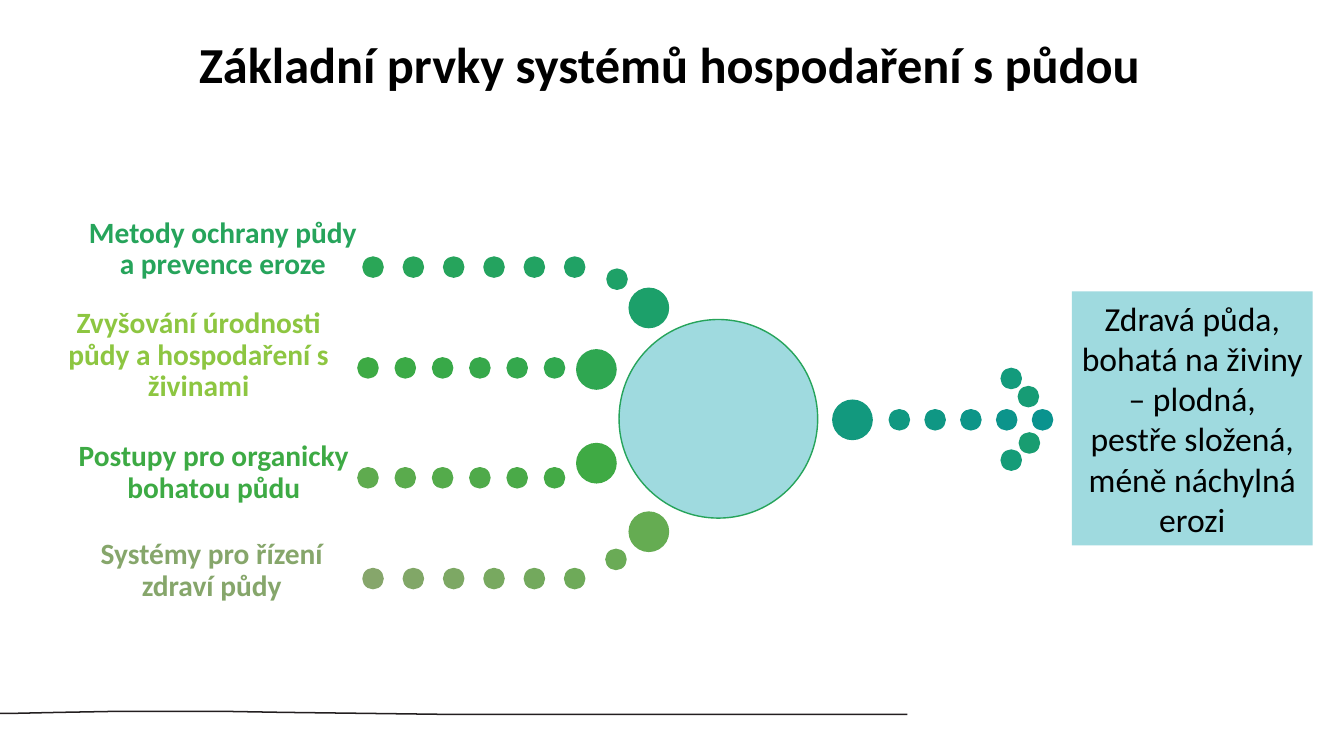
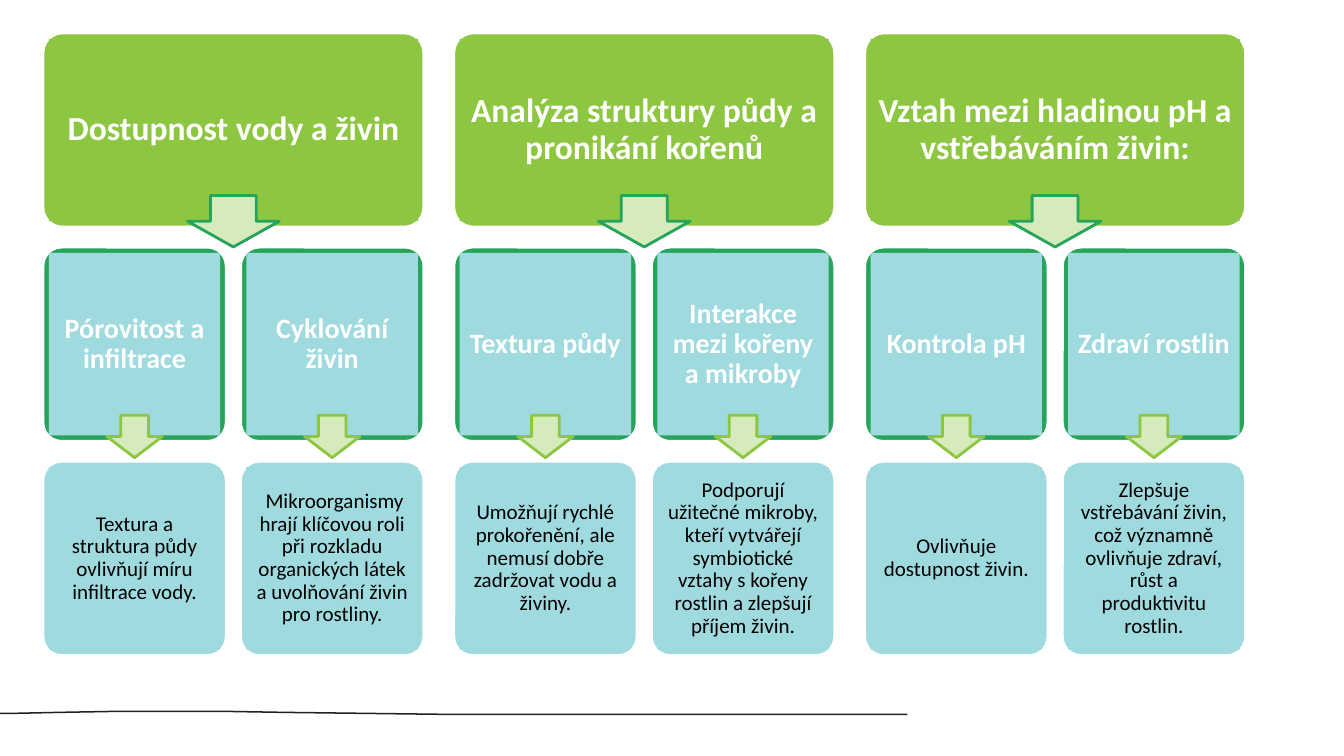
from dataclasses import dataclass

from pptx import Presentation
from pptx.dml.color import RGBColor
from pptx.enum.shapes import MSO_SHAPE
from pptx.enum.text import MSO_ANCHOR, MSO_AUTO_SIZE, PP_ALIGN
from pptx.util import Inches, Pt

FONT = "Calibri"
BLACK = RGBColor(0x00, 0x00, 0x00)
WHITE = RGBColor(0xFF, 0xFF, 0xFF)
INK = RGBColor(0x23, 0x1F, 0x20)
LIME = RGBColor(0x8D, 0xC6, 0x41)
PALE_LIME = RGBColor(0xD6, 0xEB, 0xBB)
GREEN = RGBColor(0x26, 0xA4, 0x5B)
AQUA = RGBColor(0x9F, 0xDA, 0xDF)
TEAL = RGBColor(0x0A, 0x93, 0x8E)
TEAL_GREEN = RGBColor(0x12, 0x99, 0x7E)
HEAD_START = RGBColor(0x13, 0x9B, 0x7C)
HEAD_END = RGBColor(0x19, 0x9D, 0x71)
EMERALD = RGBColor(0x2A, 0xA6, 0x57)
SEA_GREEN = RGBColor(0x1C, 0xA0, 0x6A)
LEAF = RGBColor(0x3D, 0xAA, 0x44)
DEEP_LEAF = RGBColor(0x2F, 0xA7, 0x51)
MOSS = RGBColor(0x5F, 0xAB, 0x4F)
GRASS = RGBColor(0x3F, 0xAA, 0x44)
SAGE = RGBColor(0x86, 0xA6, 0x6B)
FERN = RGBColor(0x65, 0xAC, 0x52)

DOT, HUB = 0.2, 0.39

WAVE_TOP = [(0, 7.07), (0.14, 7.07), (0.6, 7.06), (1.15, 7.05), (1.65, 7.05),
            (2.23, 7.05), (2.8, 7.06), (3.6, 7.07), (4.43, 7.08), (9, 7.08)]
WAVE_THICKNESS = 0.015


@dataclass
class Strand:
    """A label and the trail of dots leading from it to the central circle."""
    label: str
    label_box: tuple
    label_color: RGBColor
    start: tuple
    pitch: float
    bends: list
    hub: tuple
    colors: tuple


STRANDS = [
    Strand("Metody ochrany půdy a prevence eroze", (0.84, 2.3, 2.74, 0.49),
           GREEN, (3.6, 2.55), 0.4, [(6.02, 2.67)], (6.24, 2.86),
           (EMERALD, SEA_GREEN)),
    Strand("Zvyšování úrodnosti půdy a hospodaření s živinami",
           (0.6, 3.51, 2.74, 0.49), LIME, (3.55, 3.55), 0.37, [],
           (5.72, 3.47), (LEAF, DEEP_LEAF)),
    Strand("Postupy pro organicky bohatou půdu", (0.6, 4.52, 3.04, 0.49),
           LEAF, (3.55, 4.64), 0.37, [], (5.72, 4.4), (MOSS, GRASS)),
    Strand("Systémy pro řízení zdraví půdy", (0.73, 5.49, 2.74, 0.49),
           SAGE, (3.6, 5.64), 0.4, [(6.01, 5.45)], (6.24, 5.08),
           (SAGE, FERN)),
]

TOPICS = [
    ("Dostupnost vody a živin", [
        ("Pórovitost a infiltrace",
         "Textura a struktura půdy ovlivňují míru infiltrace vody."),
        ("Cyklování živin",
         " Mikroorganismy hrají klíčovou roli při rozkladu organických látek "
         "a uvolňování živin pro rostliny."),
    ]),
    ("Analýza struktury půdy a pronikání kořenů", [
        ("Textura půdy",
         "Umožňují rychlé prokořenění, ale nemusí dobře zadržovat vodu "
         "a živiny."),
        ("Interakce mezi kořeny a mikroby",
         "Podporují užitečné mikroby, kteří vytvářejí symbiotické vztahy "
         "s kořeny rostlin a zlepšují příjem živin."),
    ]),
    ("Vztah mezi hladinou pH a vstřebáváním živin:", [
        ("Kontrola pH", "Ovlivňuje dostupnost živin."),
        ("Zdraví rostlin",
         "Zlepšuje vstřebávání živin, což významně ovlivňuje zdraví, růst "
         "a produktivitu rostlin."),
    ]),
]


def add_box(slide, kind, box, fill, line=None, line_width=1):
    shape = slide.shapes.add_shape(kind, *map(Inches, box))
    shape.shadow.inherit = False
    shape.fill.solid()
    shape.fill.fore_color.rgb = fill
    if line is None:
        shape.line.fill.background()
    else:
        shape.line.color.rgb = line
        shape.line.width = Pt(line_width)
    return shape


def write(shape, text, size, color, bold=False, anchor=MSO_ANCHOR.MIDDLE,
          insets=(0.1, 0.05), spacing=None):
    frame = shape.text_frame
    frame.word_wrap = True
    frame.auto_size = MSO_AUTO_SIZE.NONE
    frame.vertical_anchor = anchor
    frame.margin_left = frame.margin_right = Inches(insets[0])
    frame.margin_top = frame.margin_bottom = Inches(insets[1])
    paragraph = frame.paragraphs[0]
    paragraph.alignment = PP_ALIGN.CENTER
    if spacing:
        paragraph.line_spacing = spacing
    run = paragraph.add_run()
    run.text = text
    run.font.name = FONT
    run.font.size = Pt(size)
    run.font.bold = bold
    run.font.color.rgb = color


def add_footer_wave(slide):
    bottom = [(x, y + WAVE_THICKNESS) for x, y in reversed(WAVE_TOP)]
    points = [(Inches(x), Inches(y)) for x, y in WAVE_TOP + bottom]
    builder = slide.shapes.build_freeform(*points[0])
    builder.add_line_segments(points[1:], close=True)
    wave = builder.convert_to_shape()
    wave.shadow.inherit = False
    wave.fill.solid()
    wave.fill.fore_color.rgb = INK
    wave.line.fill.background()


def add_title(slide, text, box):
    title = slide.shapes.title
    title.left, title.top, title.width, title.height = map(Inches, box)
    write(title, text, 36, BLACK, bold=True, anchor=MSO_ANCHOR.TOP)


def fade(start, end, count):
    """Return count colours in even steps from start to end."""
    return [RGBColor(*(round(a + (b - a) * i / (count - 1))
                       for a, b in zip(start, end)))
            for i in range(count)]


def add_dots(slide, dots, colors):
    """Draw (left, top, diameter) dots, fading between two colours."""
    for (left, top, size), color in zip(dots, fade(*colors, len(dots))):
        add_box(slide, MSO_SHAPE.OVAL, (left, top, size, size), color, color)


def dot_row(left, top, pitch, count):
    return [(left + i * pitch, top, DOT) for i in range(count)]


def add_strand(slide, strand):
    dots = dot_row(*strand.start, strand.pitch, 6)
    dots += [(*bend, DOT) for bend in strand.bends]
    add_dots(slide, dots + [(*strand.hub, HUB)], strand.colors)
    label = slide.shapes.add_textbox(*map(Inches, strand.label_box))
    write(label, strand.label, 21, strand.label_color, bold=True,
          anchor=MSO_ANCHOR.BOTTOM, insets=(0, 0), spacing=0.9)


def add_dotted_arrow(slide, left, middle):
    first = left + 0.56
    dots = [(left, middle - HUB / 2, HUB)]
    dots += dot_row(first, middle - DOT / 2, 0.355, 5)
    add_dots(slide, dots, (TEAL_GREEN, TEAL))
    head = [(first + dx, middle - DOT / 2 + dy, DOT)
            for dx, dy in [(1.11, -0.41), (1.11, 0.4),
                           (1.28, -0.23), (1.29, 0.23)]]
    add_dots(slide, head, (HEAD_START, HEAD_END))


def add_card(slide, box, frame_color, panel_color, text, size, color, bold):
    left, top, width, height = box
    frame = add_box(slide, MSO_SHAPE.ROUNDED_RECTANGLE, box, frame_color,
                    WHITE, 1.5)
    frame.adjustments[0] = 0.1
    edge = 0.055
    panel = add_box(slide, MSO_SHAPE.RECTANGLE,
                    (left + edge, top + edge,
                     width - 2 * edge, height - 2 * edge), panel_color)
    write(panel, text, size, color, bold, insets=(0.07, 0.07), spacing=0.9)


def add_down_arrow(slide, center, top, width, height, line):
    add_box(slide, MSO_SHAPE.DOWN_ARROW,
            (center - width / 2, top, width, height), PALE_LIME, line, 2)


def add_topic(slide, left, top, width, heading, details):
    card_height, row_pitch, gap = 1.92, 2.125, 0.15
    card_width = (width - gap) / 2
    add_card(slide, (left, top, width, card_height), LIME, LIME,
             heading, 24, WHITE, True)
    for i, (subject, effect) in enumerate(details):
        x = left + i * (card_width + gap)
        add_card(slide, (x, top + row_pitch, card_width, card_height),
                 GREEN, AQUA, subject, 20, WHITE, True)
        add_card(slide, (x, top + 2 * row_pitch, card_width, card_height),
                 AQUA, AQUA, effect, 15, BLACK, False)
        add_down_arrow(slide, x + card_width / 2, top + 3.79, 0.55, 0.42, LIME)
    add_down_arrow(slide, left + width / 2, top + 1.61, 0.91, 0.51, GREEN)


def build_elements_slide(prs):
    slide = prs.slides.add_slide(prs.slide_layouts[5])
    add_footer_wave(slide)
    add_dotted_arrow(slide, 8.26, 4.165)
    add_box(slide, MSO_SHAPE.OVAL, (6.14, 3.17, 1.97, 1.97), AQUA, GREEN)
    for strand in STRANDS:
        add_strand(slide, strand)
    result = add_box(slide, MSO_SHAPE.RECTANGLE, (10.63, 2.89, 2.39, 2.52),
                     AQUA)
    write(result, "Zdravá půda, bohatá na živiny – plodná, pestře složená, "
          "méně náchylná erozi", 24, BLACK)
    add_title(slide, "Základní prvky systémů hospodaření s půdou",
              (0.73, 0.28, 11.83, 0.71))


def build_topics_slide(prs):
    slide = prs.slides.add_slide(prs.slide_layouts[6])
    add_footer_wave(slide)
    for i, (heading, details) in enumerate(TOPICS):
        add_topic(slide, 0.43 + i * 4.075, 0.33, 3.77, heading, details)


def main():
    prs = Presentation()
    prs.slide_width, prs.slide_height = Inches(13.33), Inches(7.5)
    build_elements_slide(prs)
    build_topics_slide(prs)
    prs.save("out.pptx")


if __name__ == "__main__":
    main()
